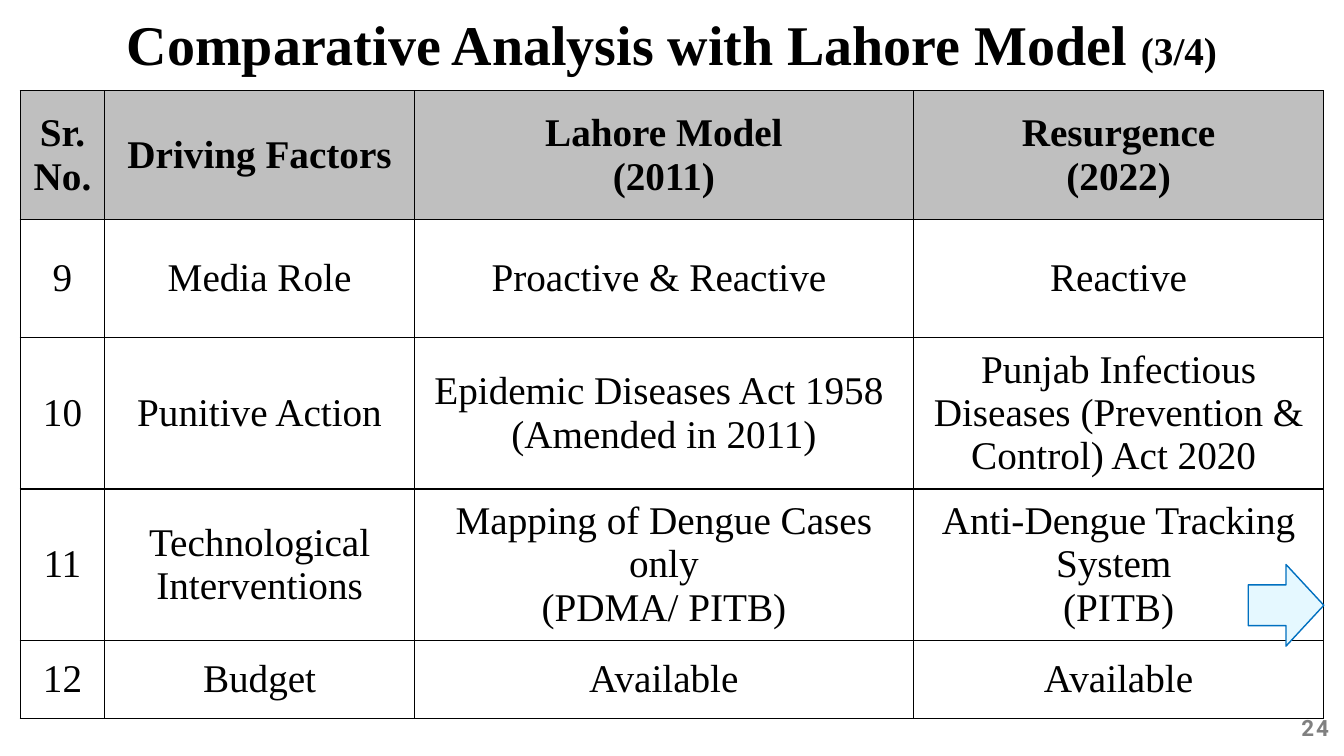
from pptx import Presentation
from pptx.dml.color import RGBColor
from pptx.enum.shapes import MSO_SHAPE as Shape
from pptx.enum.text import MSO_ANCHOR as Anchor, PP_ALIGN as Align
from pptx.oxml import parse_xml
from pptx.oxml.ns import nsdecls
from pptx.util import Inches, Pt

COLORS = {"ink": "000000", "header": "BFBFBF", "number": "808080",
          "arrow": "E5F8FF", "arrow_line": "0070C0"}
SERIF = "Times New Roman"
COLUMNS = (0.84, 3.07, 4.95, 4.07)
ROWS = (1.28, 1.17, 1.5, 1.5, 0.78)
FACTORS = (
    ("Sr. No.", "Driving Factors", "Lahore Model\n(2011)", "Resurgence\n(2022)"),
    ("9", "Media Role", "Proactive & Reactive ", "Reactive"),
    ("10", "Punitive Action", "Epidemic Diseases Act 1958 \n(Amended in 2011)",
     "Punjab Infectious Diseases (Prevention & Control) Act 2020 "),
    ("11", "Technological Interventions",
     "Mapping of Dengue Cases only\n(PDMA/ PITB)",
     "Anti-Dengue Tracking System \n(PITB)"),
    ("12", "Budget", "Available", "Available"),
)


def color(name):
    return RGBColor.from_string(COLORS[name])


def set_font(font, size, bold, name=SERIF, ink="ink"):
    font.name, font.size, font.bold = name, Pt(size), bold
    font.color.rgb = color(ink)


def place(sp, box):
    sp.left, sp.top, sp.width, sp.height = (Inches(v) for v in box)


def add_title(s, box):
    sp = s.shapes.title
    place(sp, box)
    tf = sp.text_frame
    tf.word_wrap = True
    tf.vertical_anchor = Anchor.BOTTOM
    p = tf.paragraphs[0]
    p.alignment, p.line_spacing = Align.CENTER, 0.9
    for text, size in (("Comparative Analysis with Lahore Model ", 40), ("(3/4)", 28)):
        r = p.add_run()
        r.text = text
        set_font(r.font, size, True)


def add_borders(cell):
    tc_pr = cell._tc.get_or_add_tcPr()
    for i, side in enumerate(("lnL", "lnR", "lnT", "lnB")):
        tc_pr.insert(i, parse_xml(
            f'<a:{side} {nsdecls("a")} w="{Pt(1)}"><a:solidFill>'
            f'<a:srgbClr val="{COLORS["ink"]}"/></a:solidFill></a:{side}>'))


def fill_cell(cell, text, is_header):
    cell.text = text
    cell.vertical_anchor = Anchor.MIDDLE
    for p in cell.text_frame.paragraphs:
        p.alignment = Align.CENTER
        set_font(p.font, 28, is_header)
    if is_header:
        cell.fill.solid()
        cell.fill.fore_color.rgb = color("header")
    else:
        cell.fill.background()
    add_borders(cell)


def add_factors(s, left, top):
    box = (left, top, sum(COLUMNS), sum(ROWS))
    table = s.shapes.add_table(len(ROWS), len(COLUMNS),
                               *(Inches(v) for v in box)).table
    table.horz_banding = False
    for column, width in zip(table.columns, COLUMNS):
        column.width = Inches(width)
    for i, (row, height) in enumerate(zip(table.rows, ROWS)):
        row.height = Inches(height)
        for cell, text in zip(row.cells, FACTORS[i]):
            fill_cell(cell, text, i == 0)


def add_arrow(s, box):
    sp = s.shapes.add_shape(Shape.RIGHT_ARROW, *(Inches(v) for v in box))
    sp.shadow.inherit = False
    sp.fill.solid()
    sp.fill.fore_color.rgb = color("arrow")
    sp.line.color.rgb = color("arrow_line")
    sp.line.width = Pt(1)


def add_page_number(s, box):
    tf = s.shapes.add_textbox(*(Inches(v) for v in box)).text_frame
    tf.word_wrap = False
    p = tf.paragraphs[0]
    p.alignment = Align.RIGHT
    r = p.add_run()
    r.text = "24"
    set_font(r.font, 16, True, "Roboto", "number")
    r._r.get_or_add_rPr().set("spc", "150")


def main():
    prs = Presentation()
    prs.slide_width, prs.slide_height = Inches(13.33), Inches(7.5)
    s = prs.slides.add_slide(prs.slide_layouts[5])
    add_page_number(s, (12.73, 7.04, 0.55, 0.37))
    add_factors(s, 0.2, 0.9)
    add_arrow(s, (12.38, 5.6, 0.75, 0.81))
    add_title(s, (0, 0.07, 13.33, 0.75))
    prs.save("out.pptx")


if __name__ == "__main__":
    main()
